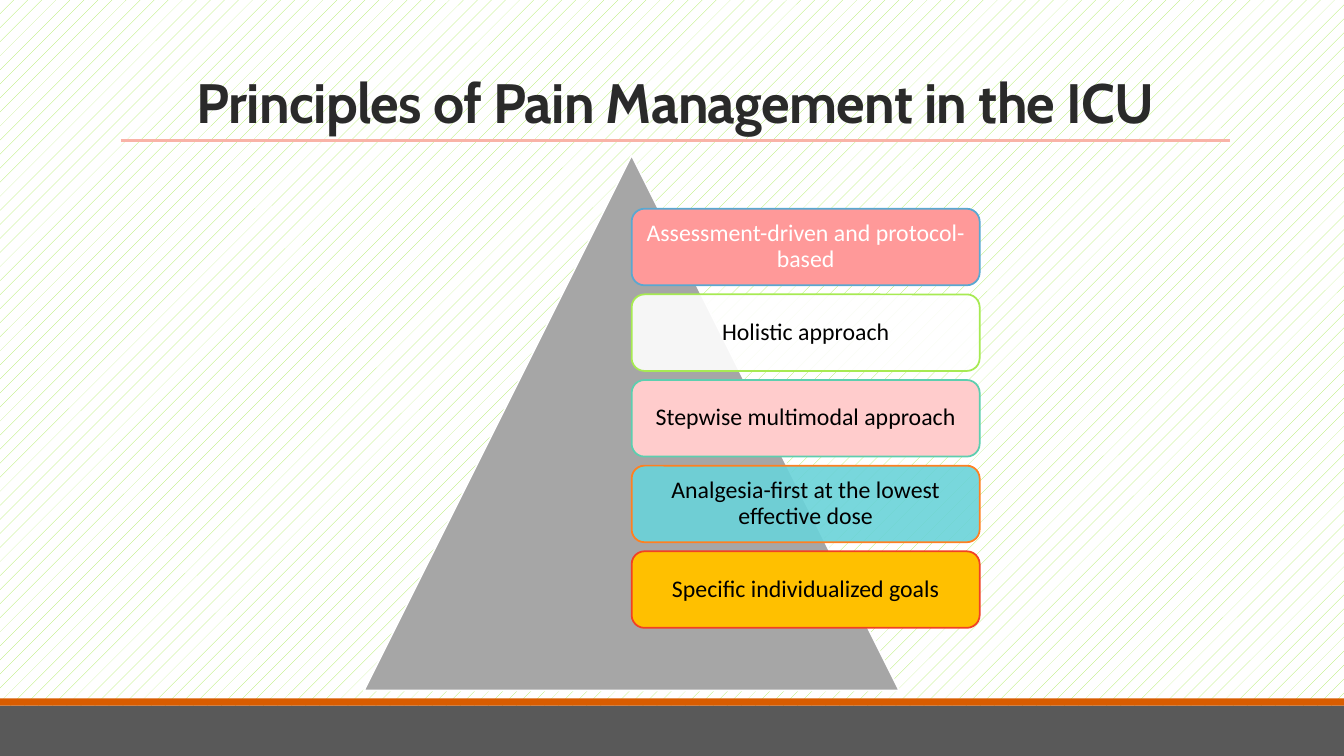
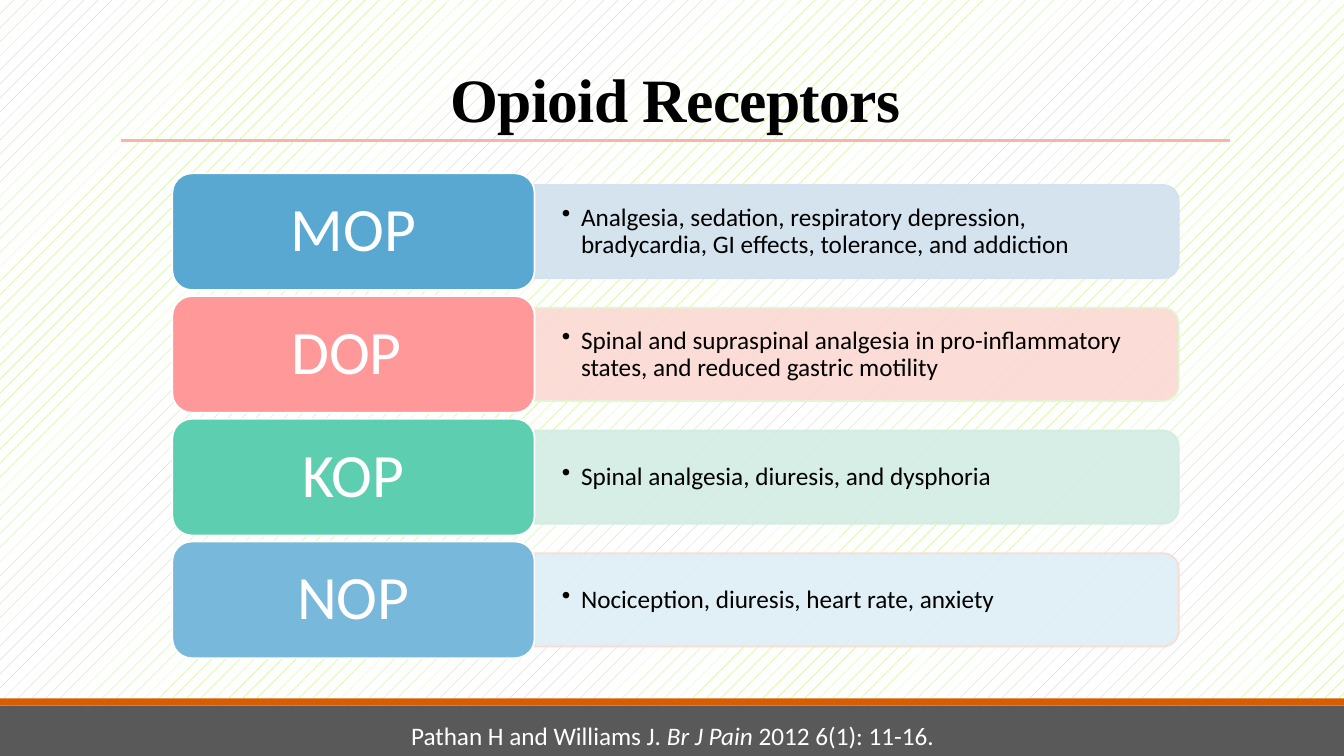
import pptx
import pptx.util
import pptx.dml.color
import pptx.enum.dml
import pptx.enum.shapes
import pptx.enum.text
import pptx.oxml.ns
import lxml.etree

Inches = pptx.util.Inches
Pt = pptx.util.Pt
RGBColor = pptx.dml.color.RGBColor
MSO_SHAPE = pptx.enum.shapes.MSO_SHAPE
MSO_ANCHOR = pptx.enum.text.MSO_ANCHOR
PP_ALIGN = pptx.enum.text.PP_ALIGN
qn = pptx.oxml.ns.qn

WHITE = RGBColor(0xFF, 0xFF, 0xFF)
BLACK = RGBColor(0x00, 0x00, 0x00)
INK = RGBColor(0x2A, 0x2A, 0x2A)
DARK_GRAY = RGBColor(0x59, 0x59, 0x59)
GRAY = RGBColor(0xA6, 0xA6, 0xA6)
BURNT_ORANGE = RGBColor(0xD8, 0x5C, 0x00)
ORANGE = RGBColor(0xFF, 0x80, 0x21)
RED = RGBColor(0xF1, 0x41, 0x24)
GOLD = RGBColor(0xFF, 0xC0, 0x00)
LIME = RGBColor(0xA7, 0xEA, 0x52)
GREEN = RGBColor(0x5D, 0xCE, 0xAF)
AQUA = RGBColor(0x6A, 0xD3, 0xD9)
BLUE = RGBColor(0x59, 0xA8, 0xD1)
SKY = RGBColor(0x78, 0xB8, 0xDA)
PINK = RGBColor(0xFF, 0x99, 0x99)
LIGHT_PINK = RGBColor(0xFF, 0xCC, 0xCC)
SALMON = RGBColor(0xF9, 0xB3, 0xA7)
PALE_BLUE = RGBColor(0xD1, 0xE1, 0xEE)
PALE_RED = RGBColor(0xFC, 0xD9, 0xD3)
PALE_LIME = RGBColor(0xE1, 0xF7, 0xD1)
PALE_GREEN = RGBColor(0xD2, 0xED, 0xE3)
PALE_SKY = RGBColor(0xDE, 0xEE, 0xF6)
PALE_ORANGE = RGBColor(0xFF, 0xD8, 0xCD)

WIDTH, HEIGHT = 13.33, 7.5

CARDS = [
    ("Assessment-driven and protocol-based", PINK, BLUE, WHITE, False),
    ("Holistic approach", WHITE, LIME, BLACK, True),
    ("Stepwise multimodal approach", LIGHT_PINK, GREEN, BLACK, False),
    ("Analgesia-first at the lowest effective dose", AQUA, ORANGE, BLACK, True),
    ("Specific individualized goals", GOLD, RED, BLACK, False),
]
RECEPTORS = [
    ("MOP", "Analgesia, sedation, respiratory depression, bradycardia, "
     "GI effects, tolerance, and addiction", BLUE, PALE_BLUE, PALE_BLUE),
    ("DOP ", "Spinal and supraspinal analgesia in pro-inflammatory states, "
     "and reduced gastric motility", PINK, PALE_RED, PALE_LIME),
    ("KOP", "Spinal analgesia, diuresis, and dysphoria",
     GREEN, PALE_GREEN, PALE_GREEN),
    ("NOP", "Nociception, diuresis, heart rate, anxiety",
     SKY, PALE_SKY, PALE_ORANGE),
]
CITATION = [("Pathan H and Williams J. ", False), ("Br J Pain ", True),
            ("2012 6(1): 11-16.", False)]


def add_text(p, text, size=18, color=BLACK, font="Calibri", bold=False,
             italic=False, align=PP_ALIGN.CENTER, spacing=None):
    """Add a formatted run to a paragraph and return the run."""
    p.alignment = align
    if spacing:
        p.line_spacing = spacing
    r = p.add_run()
    r.text = text
    r.font.size = Pt(size)
    r.font.name = font
    r.font.bold = bold
    r.font.italic = italic
    r.font.color.rgb = color
    return r


def set_frame(tf, dx, dy):
    """Wrap a text frame, centre it vertically and set its insets."""
    tf.word_wrap = True
    tf.vertical_anchor = MSO_ANCHOR.MIDDLE
    tf.margin_left = tf.margin_right = Inches(dx)
    tf.margin_top = tf.margin_bottom = Inches(dy)
    return tf


def add_shape(s, kind, x, y, w, h, fill, line=None):
    """Add a flat preset shape."""
    sp = s.shapes.add_shape(kind, Inches(x), Inches(y), Inches(w), Inches(h))
    sp.shadow.inherit = False
    sp.fill.solid()
    sp.fill.fore_color.rgb = fill
    if line is None:
        sp.line.fill.background()
    else:
        sp.line.color.rgb = line
        sp.line.width = Pt(1.25)
    return sp


def fade(element):
    """Make every colour inside an element 90 % opaque."""
    for color in element.iter(qn("a:srgbClr")):
        lxml.etree.SubElement(color, qn("a:alpha")).set("val", "90000")


def add_bullet(p, indent):
    """Give a paragraph a hanging round bullet."""
    p.line_spacing = 0.9
    pPr = p._p.get_or_add_pPr()
    pPr.set("marL", str(Inches(indent)))
    pPr.set("indent", str(-Inches(indent)))
    lxml.etree.SubElement(pPr, qn("a:buChar")).set("char", "•")


def add_rule(s, x, y, w):
    """Add the line below the title."""
    rule = s.shapes.add_connector(
        pptx.enum.shapes.MSO_CONNECTOR.STRAIGHT,
        Inches(x), Inches(y), Inches(x + w), Inches(y))
    rule.line.color.rgb = SALMON
    rule.line.width = Pt(2.25)
    lxml.etree.SubElement(rule.element.spPr, qn("a:effectLst"))
    return rule


def build_master(prs, layout, s):
    """Put background, bands, title rule and title box where slides inherit them."""
    master = prs.slide_master
    fill = master.background.fill
    fill.patterned()
    fill.pattern = pptx.enum.dml.MSO_PATTERN.PERCENT_5
    fill.fore_color.rgb = LIME
    fill.back_color.rgb = WHITE
    decor = [
        add_shape(s, MSO_SHAPE.RECTANGLE, 0, 7, WIDTH, 0.5, DARK_GRAY),
        add_shape(s, MSO_SHAPE.RECTANGLE, 0, 6.93, WIDTH, 0.07, BURNT_ORANGE),
        add_rule(s, 1.2, 1.39, 11),
    ]
    for number, sp in enumerate(decor, 101):
        sp.element.xpath(".//p:cNvPr")[0].set("id", str(number))
        master.shapes.element.append(sp.element)
    title = layout.placeholders[0]
    title.left, title.top = Inches(1.2), Inches(0.31)
    title.width, title.height = Inches(11), Inches(1.08)


def set_title(s, text, **fmt):
    """Fill the title placeholder."""
    tf = s.shapes.title.text_frame
    tf.auto_size = pptx.enum.text.MSO_AUTO_SIZE.NONE
    tf.vertical_anchor = MSO_ANCHOR.BOTTOM
    r = add_text(tf.paragraphs[0], text, bold=True, spacing=0.85, **fmt)
    r.font._element.set("spc", "-50")


def add_pyramid(s, x, y, side):
    """Draw a triangle with a column of cards starting at its axis."""
    add_shape(s, MSO_SHAPE.ISOSCELES_TRIANGLE, x, y, side, side, GRAY, WHITE)
    step = 0.16 * side
    for i, (text, fill, line, color, faded) in enumerate(CARDS):
        card = add_shape(s, MSO_SHAPE.ROUNDED_RECTANGLE, x + side / 2,
                         y + 0.1 * side + i * step, 0.65 * side, step - 0.09,
                         fill, line)
        if faded:
            fade(card.element.spPr.find(qn("a:solidFill")))
        tf = set_frame(card.text_frame, 0.07, 0.07)
        add_text(tf.paragraphs[0], text, size=17, color=color, spacing=0.9)


def add_receptor(s, x, y, w, h, name, effects, fill, pale, edge):
    """Draw one row: a label and a bar with its effects."""
    label_w, bar_h = 0.36 * w, 0.8 * h
    bar_x, bar_w = x + label_w, w - label_w
    bar = add_shape(s, MSO_SHAPE.ROUND_2_SAME_RECTANGLE,
                    bar_x + (bar_w - bar_h) / 2, y + (h - bar_w) / 2,
                    bar_h, bar_w, pale, edge)
    bar.rotation = 90
    fade(bar.element.spPr)
    text_h = bar_h - 0.09
    box = s.shapes.add_textbox(Inches(bar_x), Inches(y + (h - text_h) / 2),
                               Inches(bar_w - 0.05), Inches(text_h))
    p = set_frame(box.text_frame, 0.27, 0.14).paragraphs[0]
    add_bullet(p, 0.19)
    add_text(p, effects, align=PP_ALIGN.LEFT)
    label = add_shape(s, MSO_SHAPE.ROUNDED_RECTANGLE, x, y, label_w, h,
                      fill, WHITE)
    tf = set_frame(label.text_frame, 0.18, 0.09)
    add_text(tf.paragraphs[0], name, size=44, color=WHITE, spacing=0.9)


def add_receptors(s, x, y, w, h, gap=0.06):
    """Stack the receptor rows evenly in a box."""
    row_h = (h - gap * (len(RECEPTORS) - 1)) / len(RECEPTORS)
    for i, row in enumerate(RECEPTORS):
        add_receptor(s, x, y + i * (row_h + gap), w, row_h, *row)


def add_citation(s, x, y, w, h):
    """Write the source reference on the footer band."""
    box = s.shapes.add_textbox(Inches(x), Inches(y), Inches(w), Inches(h))
    tf = box.text_frame
    tf.word_wrap = True
    for text, italic in CITATION:
        add_text(tf.paragraphs[0], text, color=WHITE, italic=italic)


def main():
    """Build and save the presentation."""
    prs = pptx.Presentation()
    prs.slide_width, prs.slide_height = Inches(WIDTH), Inches(HEIGHT)
    layout = prs.slide_layouts[5]

    s = prs.slides.add_slide(layout)
    build_master(prs, layout, s)
    set_title(s, "Principles of Pain Management in the ICU",
              size=39.6, color=INK, font="Cabin")
    add_pyramid(s, 3.61, 1.54, 5.31)

    s = prs.slides.add_slide(layout)
    set_title(s, "Opioid Receptors", size=44, font="Times New Roman")
    add_citation(s, 3.78, 7.1, 5.78, 0.4)
    add_receptors(s, 1.71, 1.72, 9.98, 4.81)

    prs.save("out.pptx")


if __name__ == "__main__":
    main()
